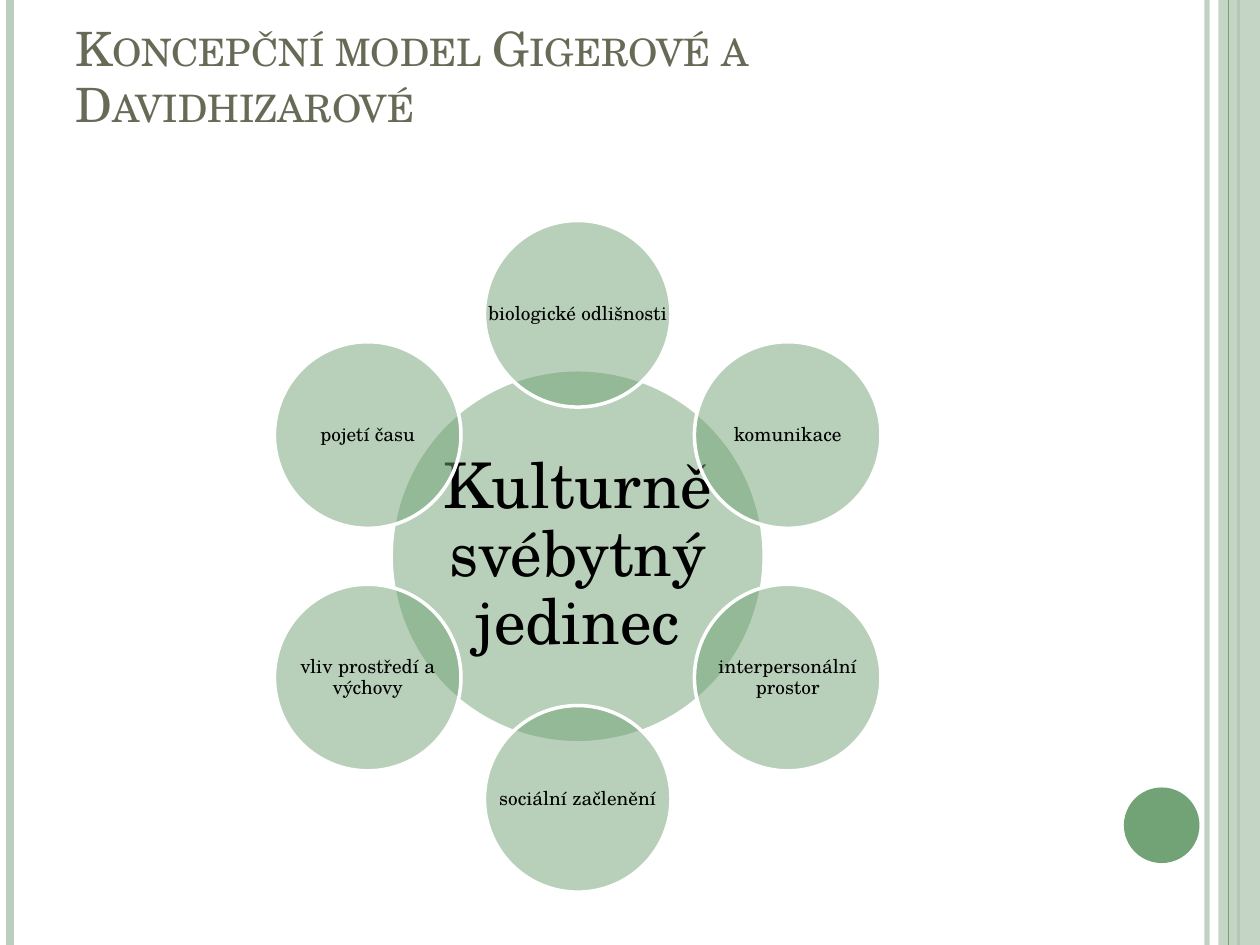
from math import cos, radians, sin

from lxml import etree
from pptx import Presentation
from pptx.dml.color import RGBColor
from pptx.enum.shapes import MSO_CONNECTOR, MSO_SHAPE
from pptx.enum.text import MSO_ANCHOR, PP_ALIGN
from pptx.oxml.ns import qn
from pptx.util import Inches, Pt

FONT = "TeX Gyre Schola"
COLORS = {"pale": "BCCEBD", "green": "72A376", "title": "676A55",
          "text": "000000", "white": "FFFFFF"}
FACTORS = ["biologické odlišnosti", "komunikace", "interpersonální prostor",
           "sociální začlenění", "vliv prostředí a výchovy", "pojetí času"]


def rgb(name):
    return RGBColor.from_string(COLORS[name])


def set_alpha(fill, percent):
    clr = fill._xPr.find(qn("a:solidFill"))[0]
    etree.SubElement(clr, qn("a:alpha")).set("val", str(percent * 1000))


def add_filled(slide, kind, left, top, width, height, color, alpha=100):
    s = slide.shapes.add_shape(kind, Inches(left), Inches(top),
                               Inches(width), Inches(height))
    s.shadow.inherit = False
    s.fill.solid()
    s.fill.fore_color.rgb = rgb(color)
    if alpha < 100:
        set_alpha(s.fill, alpha)
    s.line.fill.background()
    return s


def add_stripe(slide, x, top, height, color, width, alpha=100):
    c = slide.shapes.add_connector(MSO_CONNECTOR.STRAIGHT, Inches(x), Inches(top),
                                   Inches(x), Inches(top + height))
    c.line.color.rgb = rgb(color)
    c.line.width = Pt(width)
    if alpha < 100:
        set_alpha(c.line.fill, alpha)
    etree.SubElement(c._element.spPr, qn("a:effectLst"))


def add_text(slide, box, text, size, color, anchor, insets):
    tb = slide.shapes.add_textbox(*map(Inches, box))
    tf = tb.text_frame
    tf.word_wrap = True
    tf.vertical_anchor = anchor
    (tf.margin_left, tf.margin_top,
     tf.margin_right, tf.margin_bottom) = map(Inches, insets)
    p = tf.paragraphs[0]
    p.text = text
    p.font.name = FONT
    p.font.size = Pt(size)
    p.font.color.rgb = rgb(color)
    return p


def add_frame(slide, left, top, width, height):
    """Side stripes, right band and corner dot."""
    right = left + width
    add_stripe(slide, right - 0.42, top, height, "pale", 3, 93)
    add_stripe(slide, left + 0.08, top, height, "pale", 4.5)
    add_stripe(slide, right - 0.17, top, height, "green", 1.5)
    add_filled(slide, MSO_SHAPE.RECTANGLE, right - 0.33, top, 0.33, height, "pale", 87)
    add_stripe(slide, right - 0.25, top, height, "green", 0.75)
    add_filled(slide, MSO_SHAPE.OVAL, right - 1.08, top + height - 1.25, 0.6, 0.6, "green")


def add_title(slide, left, top, width, height):
    p = add_text(slide, (left, top, width, height),
                 "Koncepční model Gigerové a Davidhizarové", 27, "title",
                 MSO_ANCHOR.BOTTOM, (0.1, 0.05, 0.1, 0.5))
    p.runs[0].font._element.set("cap", "small")


def add_circle(slide, cx, cy, diameter, text, size, inset):
    box = (cx - diameter / 2, cy - diameter / 2, diameter, diameter)
    s = add_filled(slide, MSO_SHAPE.OVAL, *box, "green", 50)
    s.line.color.rgb = rgb("white")
    s.line.width = Pt(2)
    # The label uses the full square, wider than the oval's own text area
    p = add_text(slide, box, text, size, "text", MSO_ANCHOR.MIDDLE, [inset] * 4)
    p.alignment = PP_ALIGN.CENTER
    p.line_spacing = 0.9


def add_radial_model(slide, left, top, width, height):
    """Core circle with the factors evenly spaced around it, from the top."""
    core = height / 1.8
    outer = core / 2
    orbit = (height - outer) / 2
    cx, cy = left + width / 2, top + height / 2
    add_circle(slide, cx, cy, core, "Kulturně svébytný jedinec", 36, 0.05)
    for i, factor in enumerate(FACTORS):
        angle = radians(360 / len(FACTORS) * i - 90)
        add_circle(slide, cx + orbit * cos(angle), cy + orbit * sin(angle),
                   outer, factor, 11, 0.02)


def main():
    prs = Presentation()
    prs.slide_width, prs.slide_height = Inches(10), Inches(7.5)
    slide = prs.slides.add_slide(prs.slide_layouts[6])
    add_frame(slide, 0, 0, 10, 7.5)
    add_title(slide, 0.5, 0.3, 8.17, 1.25)
    add_radial_model(slide, 2.18, 1.75, 4.81, 5.33)
    prs.save("out.pptx")


if __name__ == "__main__":
    main()
